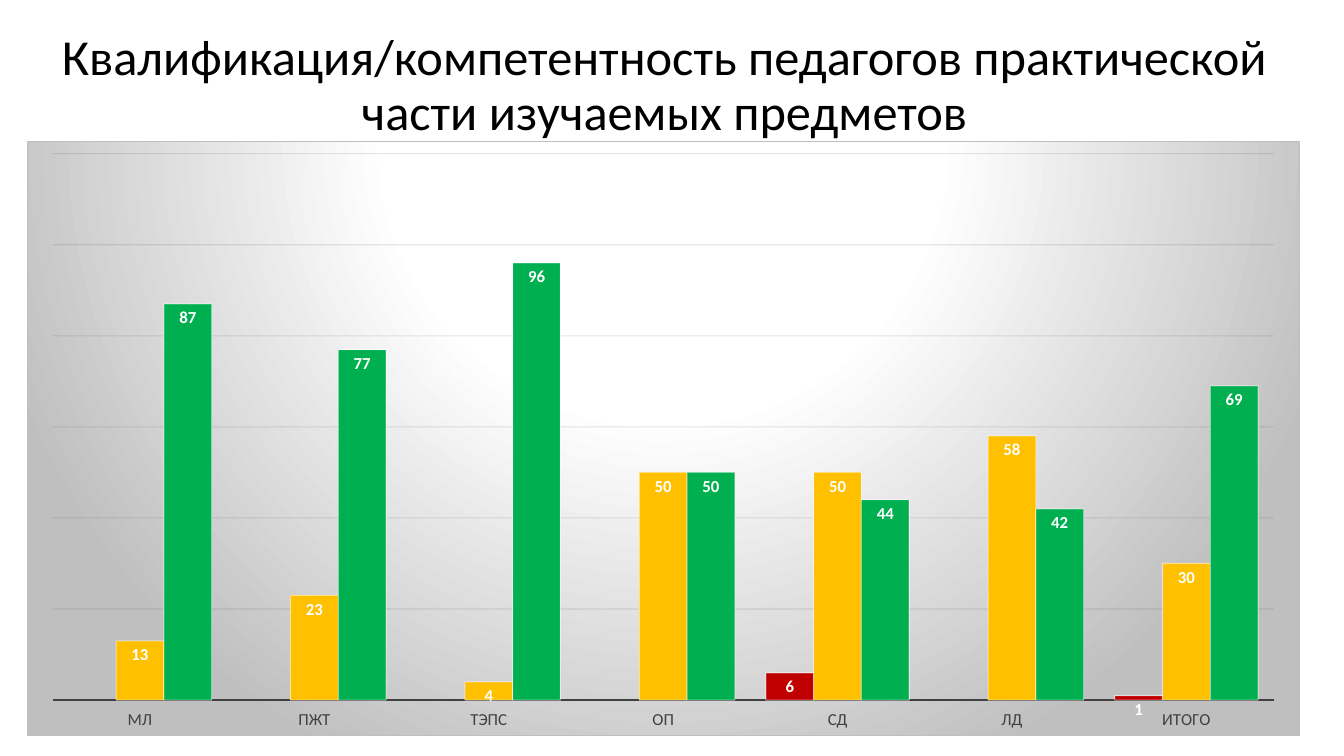
"""Build a slide with a clustered column chart of teacher qualification by subject."""
from lxml import etree
from pptx import Presentation
from pptx.chart.data import CategoryChartData
from pptx.dml.color import RGBColor
from pptx.enum.chart import XL_CHART_TYPE, XL_LABEL_POSITION, XL_TICK_LABEL_POSITION, XL_TICK_MARK
from pptx.enum.text import MSO_ANCHOR, MSO_AUTO_SIZE, PP_ALIGN
from pptx.oxml import parse_xml
from pptx.oxml.ns import nsdecls, qn
from pptx.util import Inches, Pt

COLUMN = XL_CHART_TYPE.COLUMN_CLUSTERED
IN_END = XL_LABEL_POSITION.INSIDE_END
LOW = XL_TICK_LABEL_POSITION.LOW
NO_TICK = XL_TICK_MARK.NONE
TOP = MSO_ANCHOR.TOP
NO_FIT = MSO_AUTO_SIZE.NONE
CENTER = PP_ALIGN.CENTER

FONT = "Calibri"
COLORS = {
    "black": "000000", "white": "FFFFFF", "gray": "BFBFBF", "text": "404040",
    "grid": "0D0D0D", "red": "C00000", "amber": "FFC000", "green": "00B050",
}
TITLE = "Квалификация/компетентность педагогов практической части изучаемых предметов"
CATS = ["МЛ", "ПЖТ", "ТЭПС", "ОП", "СД", "ЛД", "ИТОГО"]
SERIES = [
    ("Series 1", "red", [None, None, None, None, 6, None, 1]),
    ("Series 2", "amber", [13, 23, 4, 50, 50, 58, 30]),
    ("Series 3", "green", [87, 77, 96, 50, 44, 42, 69]),
]
STOPS = [(0, "white"), (39, "white"), (100, "gray")]
PLOT = {"x": 0.02, "y": 0.02, "w": 0.96, "h": 0.92}


def rgb(name):
    return RGBColor.from_string(COLORS[name])


def style(font, size, color, bold=False):
    font.name, font.size, font.bold = FONT, Pt(size), bold
    font.color.rgb = rgb(color)


def stroke(line, color, width):
    line.color.rgb = rgb(color)
    line.width = Pt(width)


def fade(root, query, share):
    for color in root.xpath(query):
        etree.SubElement(color, qn("a:alpha")).set("val", str(share * 1000))


class Deck:
    """Hold the deck, its current slide and the shared style."""

    def __init__(self):
        self.prs = Presentation()
        self.prs.slide_width, self.prs.slide_height = Inches(13.33), Inches(7.5)
        self.slide = self.prs.slides.add_slide(self.prs.slide_layouts[5])

    def box(self, x, y, w, h):
        wide, high = self.prs.slide_width, self.prs.slide_height
        return int(x * wide), int(y * high), int(w * wide), int(h * high)

    def title(self, text, *area):
        shape = self.slide.shapes.title
        shape.left, shape.top, shape.width, shape.height = self.box(*area)
        frame = shape.text_frame
        frame.text = text
        frame.word_wrap, frame.auto_size, frame.vertical_anchor = True, NO_FIT, TOP
        para = frame.paragraphs[0]
        para.alignment, para.line_spacing = CENTER, 0.9
        style(para.font, 36, "black")

    def chart(self, cats, rows, *area):
        data = CategoryChartData()
        data.categories = cats
        for name, _, vals in rows:
            data.add_series(name, vals)
        chart = self.slide.shapes.add_chart(COLUMN, *self.box(*area), data).chart
        chart.has_legend = chart.has_title = False
        style(chart.font, 10, "black")
        self.axes(chart)
        plot = chart.plots[0]
        plot.gap_width, plot.overlap, plot.vary_by_categories = 65, 0, False
        for bars, (_, color, _) in zip(plot.series, rows):
            self.bars(bars, color)
        self.frame(chart)

    def axes(self, chart):
        axis = chart.category_axis
        axis.major_tick_mark = axis.minor_tick_mark = NO_TICK
        axis.tick_label_position = LOW
        style(axis.tick_labels.font, 12, "text")
        stroke(axis.format.line, "text", 1.5)
        scale = chart.value_axis
        scale.minimum_scale, scale.maximum_scale, scale.major_unit = 0, 120, 20
        scale.visible, scale.has_major_gridlines = False, True
        stroke(scale.major_gridlines.format.line, "grid", 0.75)
        fade(chart._chartSpace, ".//c:majorGridlines//a:srgbClr", 10)

    def bars(self, bars, color):
        bars.invert_if_negative = False
        bars.format.fill.solid()
        bars.format.fill.fore_color.rgb = rgb(color)
        stroke(bars.format.line, "white", 0.75)
        fade(bars._element, "./c:spPr/a:ln//a:srgbClr", 50)
        labels = bars.data_labels
        labels.show_value, labels.position = True, IN_END
        style(labels.font, 12, "white", True)

    def frame(self, chart):
        stops = "".join(
            f'<a:gs pos="{pos * 1000}"><a:srgbClr val="{COLORS[name]}"/></a:gs>'
            for pos, name in STOPS)
        chart._chartSpace.find(qn("c:chart")).addnext(parse_xml(
            f'<c:spPr {nsdecls("c", "a")}><a:gradFill><a:gsLst>{stops}</a:gsLst>'
            '<a:path path="circle"><a:fillToRect l="50000" t="-80000" r="50000" b="180000"/>'
            f'</a:path></a:gradFill><a:ln w="{Pt(0.75)}"><a:solidFill>'
            f'<a:srgbClr val="{COLORS["gray"]}"/></a:solidFill></a:ln></c:spPr>'))
        area = chart._chartSpace.xpath(".//c:plotArea")[0]
        for old in area.findall(qn("c:layout")):
            area.remove(old)
        sides = "".join(f'<c:{key} val="{val}"/>' for key, val in PLOT.items())
        area.insert(0, parse_xml(
            f'<c:layout {nsdecls("c")}><c:manualLayout><c:layoutTarget val="inner"/>'
            f'<c:xMode val="edge"/><c:yMode val="edge"/>{sides}</c:manualLayout></c:layout>'))


def main():
    deck = Deck()
    deck.title(TITLE, 0.0225, 0.036, 0.944, 0.144)
    deck.chart(CATS, SERIES, 0.02, 0.187, 0.947, 0.787)
    deck.prs.save("out.pptx")


if __name__ == "__main__":
    main()
